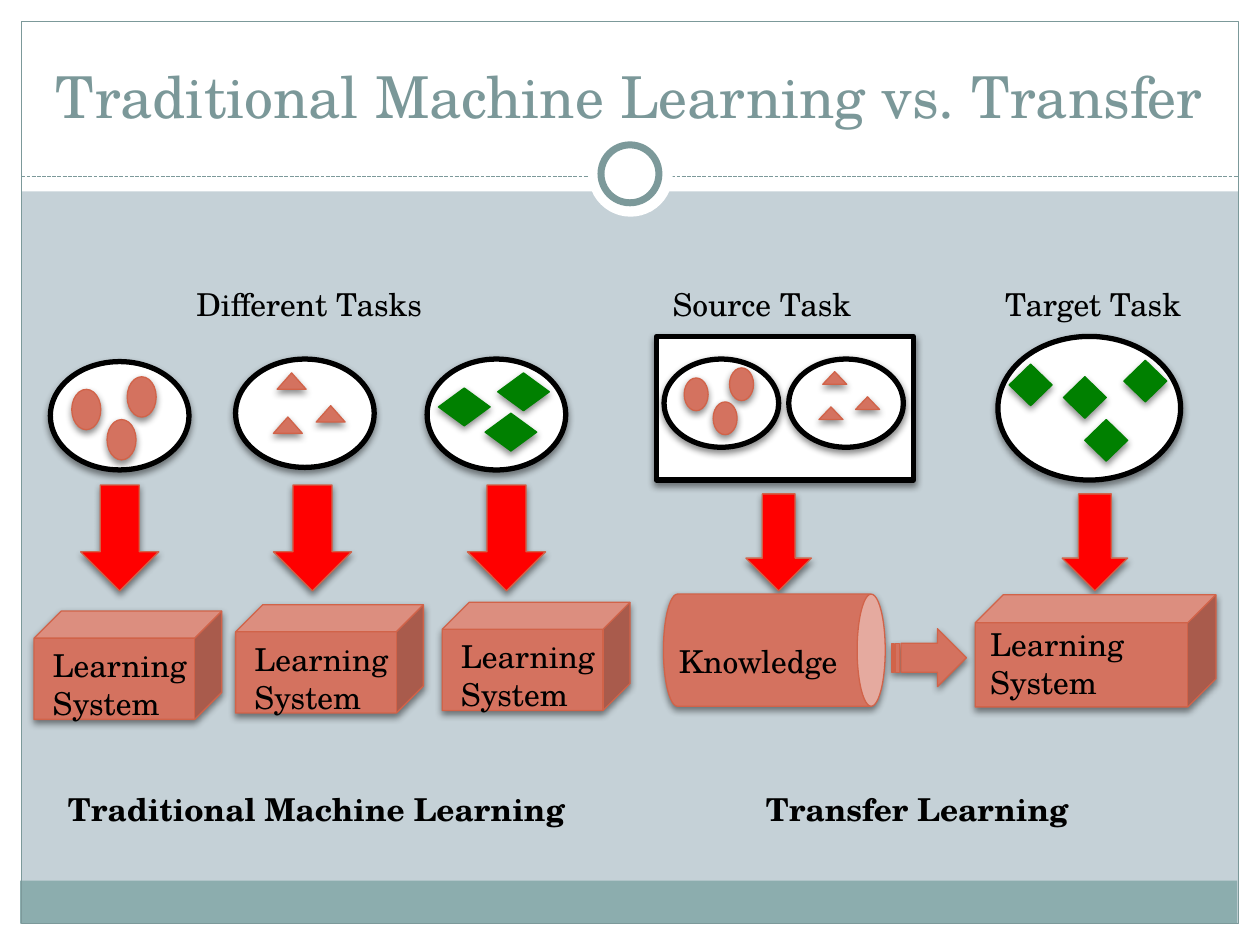
from lxml.etree import SubElement
from pptx import Presentation
from pptx.dml.color import RGBColor
from pptx.enum.dml import MSO_LINE as Dash
from pptx.enum.shapes import MSO_CONNECTOR as Link, MSO_SHAPE as Kind
from pptx.enum.text import MSO_ANCHOR as Anchor, PP_ALIGN as Align
from pptx.oxml.ns import qn
from pptx.util import Pt

PX = 9144
FONT = "TeX Gyre Schola"
WHITE = RGBColor(255, 255, 255)
BLACK = RGBColor(0, 0, 0)
SKY = RGBColor(0xC5, 0xD1, 0xD7)
TEAL = RGBColor(0x8C, 0xAD, 0xAE)
GRAY = RGBColor(0x7C, 0x99, 0x9A)
HEAD = RGBColor(0x7B, 0x98, 0x99)
CLAY = RGBColor(0xD4, 0x72, 0x5F)
RUST = RGBColor(0xD1, 0x63, 0x49)
RED = RGBColor(255, 0, 0)
GREEN = RGBColor(0, 128, 0)

STYLES = {
    "set": (Kind.OVAL, WHITE, BLACK, 3),
    "frame": (Kind.RECTANGLE, WHITE, BLACK, 3),
    "dot": (Kind.OVAL, CLAY, RUST, 0.75),
    "peak": (Kind.ISOSCELES_TRIANGLE, CLAY, RUST, 0.75),
    "gem": (Kind.DIAMOND, GREEN, GREEN, 0.75),
    "down": (Kind.DOWN_ARROW, RED, RUST, 0.75),
    "box": (Kind.CUBE, CLAY, RUST, 0.75),
    "can": (Kind.CAN, CLAY, RUST, 0.75),
    "pass": (Kind.STRIPED_RIGHT_ARROW, CLAY, RUST, 0.75),
}

TITLE = "Traditional Machine Learning vs. Transfer"
LEARN = "Learning System"
BARS = [
    (0, 733, 1000, 17, WHITE),
    (0, 0, 1000, 152, WHITE),
    (0, 0, 17, 750, WHITE),
    (983, 0, 17, 750, WHITE),
    (16, 699, 966, 34, TEAL),
]

# style, width, height, places
TRANSFER = [
    ("frame", 204, 114, [(521, 267)]),
    ("set", 91, 70, [(527, 285), (626, 285)]),
    ("dot", 19, 26, [(543, 300), (579, 292), (566, 319)]),
    ("peak", 19, 10, [(653, 295), (679, 315), (650, 323)]),
    ("set", 145, 114, [(792, 267)]),
    ("gem", 34, 33, [(801, 289), (892, 286), (861, 333), (844, 299)]),
    ("down", 52, 77, [(592, 392), (843, 392)]),
    ("can", 89, 176, [(570, 428)]),
    ("box", 191, 89, [(774, 472)]),
    ("pass", 59, 46, [(708, 499)]),
]
TRANSFER_WORDS = [
    ("Source Task", 524, 221, 204, 40),
    ("Target Task", 788, 221, 240, 40),
    ("Knowledge", 529, 505, 149, 40),
    (LEARN, 776, 491, 194, 71),
]
CUBES = [(27, 485), (187, 480), (351, 478)]
TASKS = [
    ("set", 110, 86, [(40, 287), (187, 285)]),
    ("set", 110, 88, [(339, 285)]),
    ("dot", 23, 32, [(57, 309), (101, 299), (85, 333)]),
    ("peak", 23, 13, [(220, 296), (251, 322), (217, 331)]),
    ("gem", 41, 30, [(348, 308), (395, 296), (385, 328)]),
    ("down", 62, 84, [(64, 385), (217, 385), (371, 385)]),
    ("box", 149, 86, CUBES),
]
TASK_WORDS = [("Different Tasks", 146, 221, 349, 40)] + [
    (LEARN, x + 5, y + 23, 128, 71) for x, y in CUBES
]
NAMES = [
    ("Traditional Machine Learning", 44, 622, 415, 40),
    ("Transfer Learning", 598, 622, 415, 40),
]


def emu(*nums):
    return [n * PX for n in nums]


def write(frame, text, size=18, color=BLACK, bold=False, align=Align.LEFT,
          anchor=Anchor.TOP):
    frame.word_wrap = True
    frame.vertical_anchor = anchor
    para = frame.paragraphs[0]
    para.alignment = align
    run = para.add_run()
    run.text = text
    font = run.font
    font.name, font.size, font.bold = FONT, Pt(size), bold
    font.color.rgb = color


def label(shapes, text, *area, **form):
    write(shapes.add_textbox(*emu(*area)).text_frame, text, **form)


def draw(shapes, kind, area, fill=None, line=None, width=0.75):
    shape = shapes.add_shape(kind, *emu(*area))
    shape.shadow.inherit = False
    if fill is None:
        shape.fill.background()
    else:
        shape.fill.solid()
        shape.fill.fore_color.rgb = fill
    if line is None:
        shape.line.fill.background()
    else:
        shape.line.color.rgb = line
        shape.line.width = Pt(width)
    return shape


def shade(shape):
    glow = shape._element.spPr.find(qn("a:effectLst"))
    drop = SubElement(glow, qn("a:outerShdw"), blurRad=str(Pt(4)),
                      dist=str(Pt(2)), dir="5400000", rotWithShape="0")
    tone = SubElement(drop, qn("a:srgbClr"), val="000000")
    SubElement(tone, qn("a:alpha"), val="45000")


def panel(slide, parts, words):
    shapes = slide.shapes.add_group_shape().shapes
    for style, wide, high, spots in parts:
        kind, fill, line, width = STYLES[style]
        for x, y in spots:
            shape = draw(shapes, kind, (x, y, wide, high), fill, line, width)
            shade(shape)
            if style == "can":
                shape.rotation = 90
    for word in words:
        label(shapes, *word)


def backdrop(slide):
    slide.background.fill.solid()
    slide.background.fill.fore_color.rgb = SKY
    shapes = slide.shapes
    for *area, fill in BARS:
        draw(shapes, Kind.RECTANGLE, area, fill)
    draw(shapes, Kind.RECTANGLE, (17, 17, 966, 716), line=GRAY)
    rule = shapes.add_connector(Link.STRAIGHT, *emu(17, 140, 983, 140))
    rule.line.color.rgb = GRAY
    rule.line.width = Pt(0.75)
    rule.line.dash_style = Dash.SQUARE_DOT
    SubElement(rule._element.spPr, qn("a:effectLst"))
    draw(shapes, Kind.OVAL, (467, 105, 67, 67), WHITE)
    draw(shapes, Kind.OVAL, (477, 115, 46, 46), WHITE, GRAY, 4)


def main():
    deck = Presentation()
    deck.slide_width, deck.slide_height = emu(1000, 750)
    slide = deck.slides.add_slide(deck.slide_layouts[5])
    backdrop(slide)

    title = slide.shapes.title
    title.left, title.top, title.width, title.height = emu(33, 25, 933, 83)
    slide.shapes._spTree.append(title._element)
    frame = title.text_frame
    frame.margin_left = frame.margin_right = 0
    write(frame, TITLE, size=33, color=HEAD, align=Align.CENTER,
          anchor=Anchor.BOTTOM)

    panel(slide, TRANSFER, TRANSFER_WORDS)
    panel(slide, TASKS, TASK_WORDS)
    for name in NAMES:
        label(slide.shapes, *name, bold=True)
    deck.save("out.pptx")


if __name__ == "__main__":
    main()
